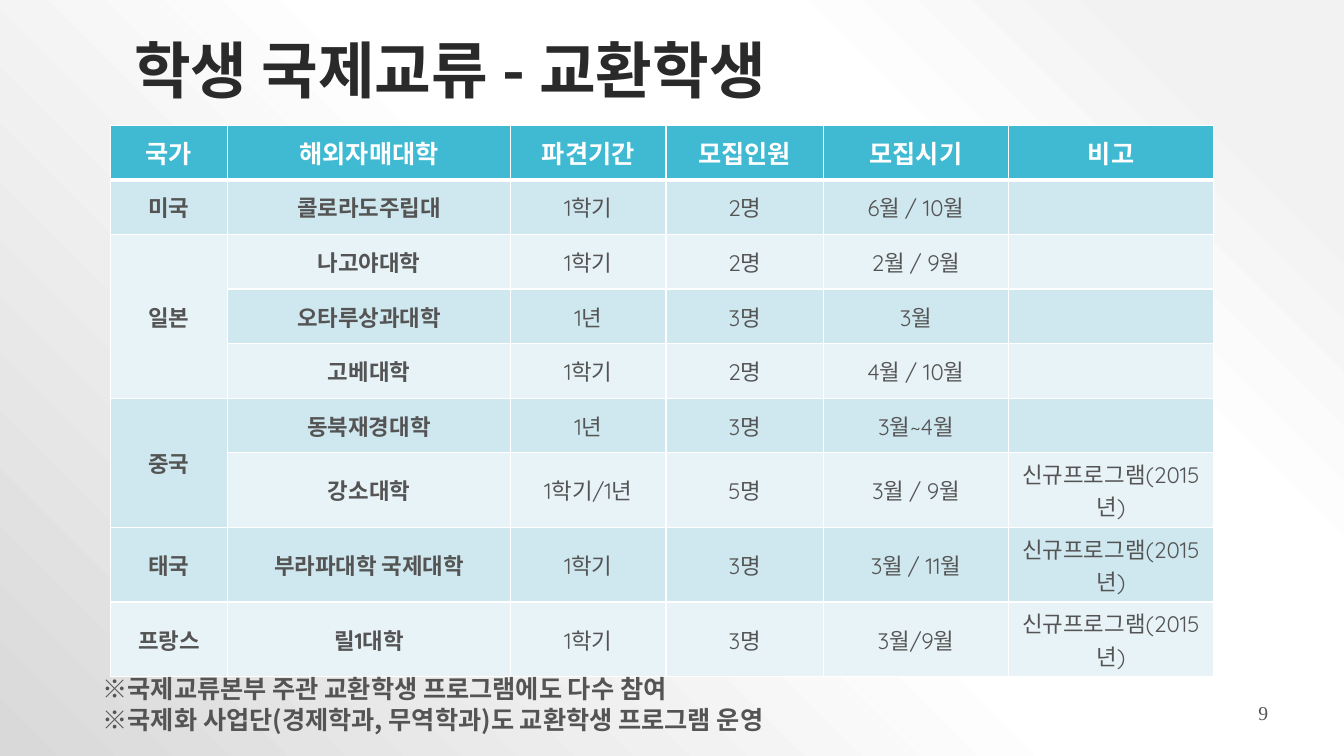
from dataclasses import dataclass

from lxml import etree
from pptx import Presentation
from pptx import util as u
from pptx.dml.color import RGBColor
from pptx.enum import text
from pptx.oxml import parse_xml
from pptx.oxml.ns import nsdecls, qn


@dataclass(frozen=True)
class Theme:
    title_color: str = "2A2A2A"
    body_color: str = "545454"
    white: str = "FFFFFF"
    header_fill: str = "40BAD2"
    bands: tuple = ("CFE7EE", "E8F3F7")
    backdrop: tuple = ((10, "F2F2F2"), (28, "FFFFFF"), (48, "FFFFFF"), (100, "D9D9D9"))
    korean: str = "Noto Sans CJK KR"
    table_font: str = "Quicksand"
    number_font: str = "Times New Roman"
    title_size: int = 44
    header_size: int = 18
    cell_size: int = 16
    note_size: int = 18
    number_size: int = 14


@dataclass(frozen=True)
class Box:
    left: float
    top: float
    width: float
    height: float

    def lengths(self):
        return [u.Pt(value) for value in (self.left, self.top, self.width, self.height)]


THEME = Theme()
COLUMN_WIDTHS = (83.7, 202.3, 110.9, 112.5, 132.3, 146.3)
ROW_HEIGHTS = (39,) * 6 + (45,) * 3
HEADINGS = ("국가", "해외자매대학", "파견기간", "모집인원", "모집시기", "비고")
NEW_PROGRAM = "신규프로그램(2015년)"
COUNTRIES = (
    ("미국", (("콜로라도주립대", "1학기", "2명", "6월 / 10월", ""),)),
    ("일본", (
        ("나고야대학", "1학기", "2명", "2월 / 9월", ""),
        ("오타루상과대학", "1년", "3명", "3월", ""),
        ("고베대학", "1학기", "2명", "4월 / 10월", ""),
    )),
    ("중국", (
        ("동북재경대학", "1년", "3명", "3월~4월", ""),
        ("강소대학", "1학기/1년", "5명", "3월 / 9월", NEW_PROGRAM),
    )),
    ("태국", (("부라파대학 국제대학", "1학기", "3명", "3월 / 11월", NEW_PROGRAM),)),
    ("프랑스", (("릴1대학", "1학기", "3명", "3월/9월", NEW_PROGRAM),)),
)
NOTES = (
    "※국제교류본부 주관 교환학생 프로그램에도 다수 참여",
    "※국제화 사업단(경제학과, 무역학과)도 교환학생 프로그램 운영",
)


def format_text(para, size, color, latin, bold=False, align=text.PP_ALIGN.LEFT):
    para.alignment = align
    for span in para.runs:
        span.font.size = u.Pt(size)
        span.font.bold = bold
        span.font.color.rgb = RGBColor.from_string(color)
        span.font.name = latin
        east_asian = etree.SubElement(span.font._element, qn("a:ea"))
        east_asian.set("typeface", THEME.korean)


def paint_background(page):
    stops = "".join(
        f'<a:gs pos="{position * 1000}"><a:srgbClr val="{color}"/></a:gs>'
        for position, color in THEME.backdrop
    )
    page.background.fill.solid()
    properties = page.background._cSld.bg.bgPr
    properties.replace(properties[0], parse_xml(
        f'<a:gradFill {nsdecls("a")} rotWithShape="1"><a:gsLst>{stops}</a:gsLst>'
        '<a:path path="circle"><a:fillToRect l="100000" b="100000"/></a:path></a:gradFill>'
    ))


def place_title(page, box):
    title = page.shapes.title
    title.left, title.top, title.width, title.height = box.lengths()
    frame = title.text_frame
    frame.text = "학생 국제교류 - 교환학생"
    frame.auto_size = text.MSO_AUTO_SIZE.NONE
    frame.vertical_anchor = text.MSO_ANCHOR.MIDDLE
    frame.paragraphs[0].line_spacing = 0.9
    format_text(frame.paragraphs[0], THEME.title_size, THEME.title_color, THEME.korean, True)


def border_cell(cell, bottom_width):
    properties = cell._tc.get_or_add_tcPr()
    sides = (("lnL", 1), ("lnR", 1), ("lnT", 1), ("lnB", bottom_width))
    for index, (side, width) in enumerate(sides):
        properties.insert(index, parse_xml(
            f'<a:{side} {nsdecls("a")} w="{u.Pt(width)}"><a:solidFill>'
            f'<a:srgbClr val="{THEME.white}"/></a:solidFill></a:{side}>'
        ))


def fill_cell(cell, words, row, column):
    header = row == 0
    fill = THEME.header_fill if header else THEME.bands[(row - 1) % 2]
    cell.fill.solid()
    cell.fill.fore_color.rgb = RGBColor.from_string(fill)
    cell.vertical_anchor = text.MSO_ANCHOR.MIDDLE
    cell.text_frame.text = words
    format_text(
        cell.text_frame.paragraphs[0],
        THEME.header_size if header else THEME.cell_size,
        THEME.white if header else THEME.body_color,
        THEME.table_font,
        header or column < 2,
        text.PP_ALIGN.CENTER,
    )
    border_cell(cell, 3 if header else 1)


def place_table(page, box):
    table = page.shapes.add_table(len(ROW_HEIGHTS), len(COLUMN_WIDTHS), *box.lengths()).table
    for column, width in zip(table.columns, COLUMN_WIDTHS):
        column.width = u.Pt(width)
    for row, height in zip(table.rows, ROW_HEIGHTS):
        row.height = u.Pt(height)
    rows = [HEADINGS]
    for country, schools in COUNTRIES:
        first = len(rows)
        for index, school in enumerate(schools):
            rows.append(("" if index else country, *school))
        if len(schools) > 1:
            table.cell(first, 0).merge(table.cell(len(rows) - 1, 0))
    for row, values in enumerate(rows):
        for column, words in enumerate(values):
            fill_cell(table.cell(row, column), words, row, column)


def place_notes(page, box):
    pitch = box.height / len(NOTES)
    for index, words in enumerate(NOTES):
        line = Box(box.left, box.top + index * pitch, box.width, pitch)
        frame = page.shapes.add_textbox(*line.lengths()).text_frame
        frame.word_wrap = False
        frame.text = words
        frame.paragraphs[0].line_spacing = 0.9
        format_text(frame.paragraphs[0], THEME.note_size, THEME.body_color, THEME.korean, True)


def place_page_number(page, box):
    frame = page.shapes.add_textbox(*box.lengths()).text_frame
    frame.word_wrap = True
    frame.text = "9"
    format_text(frame.paragraphs[0], THEME.number_size, THEME.body_color,
                THEME.number_font, align=text.PP_ALIGN.RIGHT)


def build_exchange_slide(deck):
    page = deck.slides.add_slide(deck.slide_layouts[5])
    paint_background(page)
    place_title(page, Box(88.6, 0, 768.2, 104.4))
    place_table(page, Box(78.8, 89.5, sum(COLUMN_WIDTHS), sum(ROW_HEIGHTS)))
    place_notes(page, Box(66.2, 479.5, 578, 44.6))
    place_page_number(page, Box(763.2, 496.8, 149.8, 36))


def main():
    deck = Presentation()
    deck.slide_width, deck.slide_height = u.Pt(960), u.Pt(540)
    build_exchange_slide(deck)
    deck.save("out.pptx")


if __name__ == "__main__":
    main()
